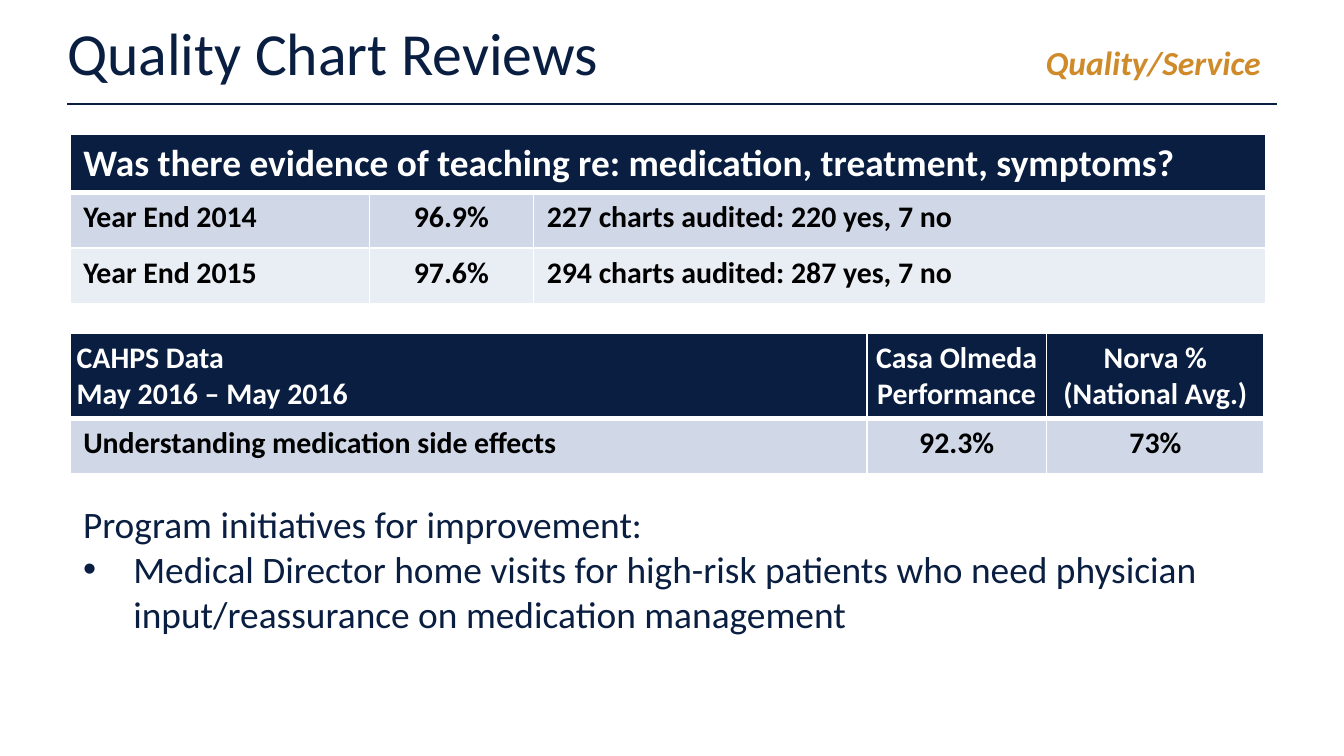
import pptx
import pptx.dml.color
import pptx.enum.shapes
import pptx.enum.text
import pptx.oxml
import pptx.oxml.ns
import pptx.util

Cm = pptx.util.Cm
Pt = pptx.util.Pt
ALIGN = pptx.enum.text.PP_ALIGN
FONT = "Calibri"
COLOURS = {
    "navy": "091E40",
    "gold": "CF8A2A",
    "white": "FFFFFF",
    "black": "000000",
    "band": "D0D8E8",
    "pale": "E9EDF4",
}
NAMESPACE = pptx.oxml.ns.nsdecls("a")


def rgb(name):
    return pptx.dml.color.RGBColor.from_string(COLOURS[name])


def add_xml(parent, xml):
    """Append an element whose first tag still lacks its namespace."""
    tag, rest = xml.split(" ", 1)
    parent.append(pptx.oxml.parse_xml(f"{tag} {NAMESPACE} {rest}"))


def add_span(para, text, size, colour, bold=False, italic=False):
    span = para.add_run()
    span.text = text
    span.font.name = FONT
    span.font.size = Pt(size)
    span.font.bold = bold
    span.font.italic = italic
    span.font.color.rgb = rgb(colour)


def add_text_box(page, left, top, width, height):
    box = page.shapes.add_textbox(Cm(left), Cm(top), Cm(width), Cm(height))
    box.text_frame.word_wrap = True
    return box.text_frame


def add_heading(page, left, top, width, height):
    """Title, right-aligned section label and the rule below them."""
    margin = 1.27
    frame = add_text_box(page, left, top, width, height)
    frame.vertical_anchor = pptx.enum.text.MSO_ANCHOR.MIDDLE
    frame.margin_left = frame.margin_right = Cm(margin)
    para = frame.paragraphs[0]
    add_xml(para._p.get_or_add_pPr(),
            f'<a:tabLst ><a:tab pos="{Cm(22.56)}" algn="r"/></a:tabLst>')
    add_span(para, "Quality Chart Reviews\t", 32, "navy")
    add_span(para, "Quality/Service", 18, "gold", bold=True, italic=True)

    rule = page.shapes.add_connector(
        pptx.enum.shapes.MSO_CONNECTOR.STRAIGHT,
        Cm(left + margin), Cm(top + height),
        Cm(left + width - margin), Cm(top + height))
    rule.line.color.rgb = rgb("navy")
    rule.line.width = Pt(1)
    add_xml(rule._element.spPr, "<a:effectLst />")


def fill_cell(cell, lines, size, colour, fill, align, bottom_width):
    properties = cell._tc.get_or_add_tcPr()
    for side in "LRTB":
        width = Pt(bottom_width if side == "B" else 1)
        add_xml(properties, f'<a:ln{side} w="{width}"><a:solidFill><a:srgbClr '
                f'val="{COLOURS["white"]}"/></a:solidFill></a:ln{side}>')
    cell.fill.solid()
    cell.fill.fore_color.rgb = rgb(fill)
    para = cell.text_frame.paragraphs[0]
    para.alignment = align
    for number, line in enumerate(lines.split("\n") if lines else []):
        if number:
            para.add_line_break()
        add_span(para, line, size, colour, bold=True)


def add_banded_table(page, left, top, widths, heights, rows, aligns, header_size):
    """Navy header row above body rows in alternating tints."""
    table = page.shapes.add_table(
        len(rows), len(widths), Cm(left), Cm(top),
        Cm(sum(widths)), Cm(sum(heights))).table
    for column, width in zip(table.columns, widths):
        column.width = Cm(width)
    for row, height in zip(table.rows, heights):
        row.height = Cm(height)
    for r, texts in enumerate(rows):
        if r == 0:
            style = header_size, "white", "navy"
        else:
            style = 16, "black", "band" if r % 2 else "pale"
        for c, text in enumerate(texts):
            fill_cell(table.cell(r, c), text, *style, aligns[c],
                      bottom_width=1 if r else 3)
    return table


def add_audit_table(page, left, top):
    rows = [
        ("Was there evidence of teaching re: medication, treatment, symptoms?", "", ""),
        ("Year End 2014", "96.9%", "227 charts audited: 220 yes, 7 no"),
        ("Year End 2015", "97.6%", "294 charts audited: 287 yes, 7 no"),
    ]
    table = add_banded_table(page, left, top, [5.66, 3.1, 13.84], [1.05] * 3, rows,
                             [ALIGN.LEFT, ALIGN.CENTER, ALIGN.LEFT], 20)
    table.cell(0, 0).merge(table.cell(0, 2))


def add_survey_table(page, left, top):
    rows = [
        ("CAHPS Data\nMay 2016 – May 2016", "Casa Olmeda Performance",
         "Norva %\n(National Avg.)"),
        ("Understanding medication side effects", "92.3%", "73%"),
    ]
    table = add_banded_table(page, left, top, [15.06, 3.4, 4.11], [1.57, 1.05], rows,
                             [ALIGN.LEFT, ALIGN.CENTER, ALIGN.CENTER], 16)
    for cell in table.rows[0].cells:
        cell.margin_left = cell.margin_right = Cm(0.13)


def add_initiatives(page, left, top, width, height):
    frame = add_text_box(page, left, top, width, height)
    add_span(frame.paragraphs[0], "Program initiatives for improvement:", 20, "navy")
    para = frame.add_paragraph()
    properties = para._p.get_or_add_pPr()
    properties.set("marL", str(Cm(0.95)))
    properties.set("indent", str(-Cm(0.95)))
    add_xml(properties, '<a:buFont typeface="Arial"/>')
    add_xml(properties, '<a:buChar char="•"/>')
    add_span(para, "Medical Director home visits for high-risk patients who need "
             "physician input/reassurance on medication management", 20, "navy")


def main():
    deck = pptx.Presentation()
    deck.slide_width, deck.slide_height = Cm(25.4), Cm(14.29)
    page = deck.slides.add_slide(deck.slide_layouts[6])
    left = 1.32
    add_heading(page, 0, 0, 25.4, 1.96)
    add_audit_table(page, left, 2.54)
    add_survey_table(page, left, 6.3)
    add_initiatives(page, left, 9.35, 23.75, 3.58)
    deck.save("out.pptx")


if __name__ == "__main__":
    main()
